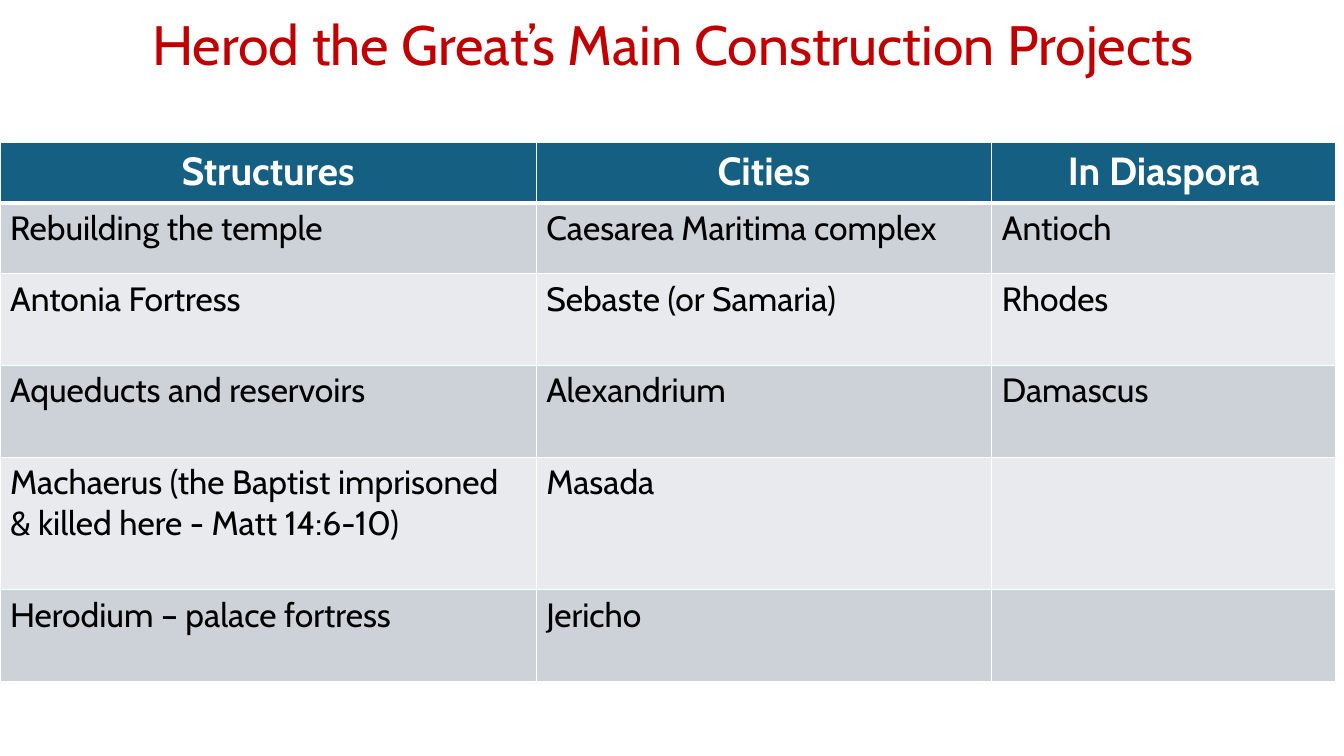
import pptx
import pptx.dml.color
import pptx.enum.text
import pptx.oxml
import pptx.oxml.ns
import pptx.util
from pptx.util import Pt

FONT = "Cabin"
COLORS = {
    "title": "C00000",
    "header": "156082",
    "odd": "CCD2D8",
    "even": "E8EAED",
    "text": "000000",
    "white": "FFFFFF",
}
CENTER = pptx.enum.text.PP_ALIGN.CENTER
LEFT = pptx.enum.text.PP_ALIGN.LEFT

COLUMN_WIDTHS = (383, 325.5, 245.5)
ROW_HEIGHTS = (43.2, 50.4, 65.7, 65.7, 94.4, 65.7)
PROJECTS = (
    ("Structures", "Cities", "In Diaspora"),
    ("Rebuilding the temple", "Caesarea Maritima complex", "Antioch"),
    ("Antonia Fortress", "Sebaste (or Samaria)", "Rhodes"),
    ("Aqueducts and reservoirs", "Alexandrium", "Damascus"),
    ("Machaerus (the Baptist imprisoned & killed here - Matt 14:6-10)", "Masada", ""),
    ("Herodium – palace fortress", "Jericho", ""),
)


def rgb(name):
    return pptx.dml.color.RGBColor.from_string(COLORS[name])


def write_text(frame, text, *, size, color, bold=False, align=LEFT, line_spacing=None):
    para = frame.paragraphs[0]
    para.alignment = align
    para.line_spacing = line_spacing
    span = para.add_run()
    span.text = text
    span.font.name = FONT
    span.font.size = Pt(size)
    span.font.bold = bold
    span.font.color.rgb = rgb(color)


def set_borders(cell, top, bottom):
    """Draw white cell edges; top and bottom are line widths in points."""
    properties = cell._tc.get_or_add_tcPr()
    for side, width in (("L", 1), ("R", 1), ("T", top), ("B", bottom)):
        properties.append(pptx.oxml.parse_xml(
            f'<a:ln{side} {pptx.oxml.ns.nsdecls("a")} w="{Pt(width)}">'
            f'<a:solidFill><a:srgbClr val="{COLORS["white"]}"/></a:solidFill>'
            f'</a:ln{side}>'
        ))


def fill_cell(cell, color):
    cell.fill.solid()
    cell.fill.fore_color.rgb = rgb(color)


def add_title(page, text):
    title = page.shapes.title
    title.left, title.top, title.width, title.height = Pt(16), Pt(15), Pt(929), Pt(38)
    frame = title.text_frame
    frame.word_wrap = True
    frame.auto_size = pptx.enum.text.MSO_AUTO_SIZE.NONE
    frame.vertical_anchor = pptx.enum.text.MSO_ANCHOR.MIDDLE
    write_text(frame, text, size=39.6, color="title", align=CENTER, line_spacing=0.9)


def add_project_table(page):
    table = page.shapes.add_table(
        len(PROJECTS), len(COLUMN_WIDTHS), Pt(0), Pt(101.8),
        Pt(sum(COLUMN_WIDTHS)), Pt(sum(ROW_HEIGHTS)),
    ).table
    for column, width in zip(table.columns, COLUMN_WIDTHS):
        column.width = Pt(width)
    for index, (row, height, texts) in enumerate(zip(table.rows, ROW_HEIGHTS, PROJECTS)):
        row.height = Pt(height)
        is_header = index == 0
        for cell, text in zip(row.cells, texts):
            set_borders(cell, top=3 if index == 1 else 1, bottom=3 if is_header else 1)
            if is_header:
                fill_cell(cell, "header")
                write_text(cell.text_frame, text, size=28, color="white", bold=True, align=CENTER)
            else:
                fill_cell(cell, "odd" if index % 2 else "even")
                if text:
                    write_text(cell.text_frame, text, size=24, color="text")


def main():
    deck = pptx.Presentation()
    deck.slide_width, deck.slide_height = Pt(960), Pt(540)
    page = deck.slides.add_slide(deck.slide_layouts.get_by_name("Title Only"))
    page.background.fill.solid()
    page.background.fill.fore_color.rgb = rgb("white")
    add_title(page, "Herod the Great’s Main Construction Projects")
    add_project_table(page)
    deck.save("out.pptx")


if __name__ == "__main__":
    main()
